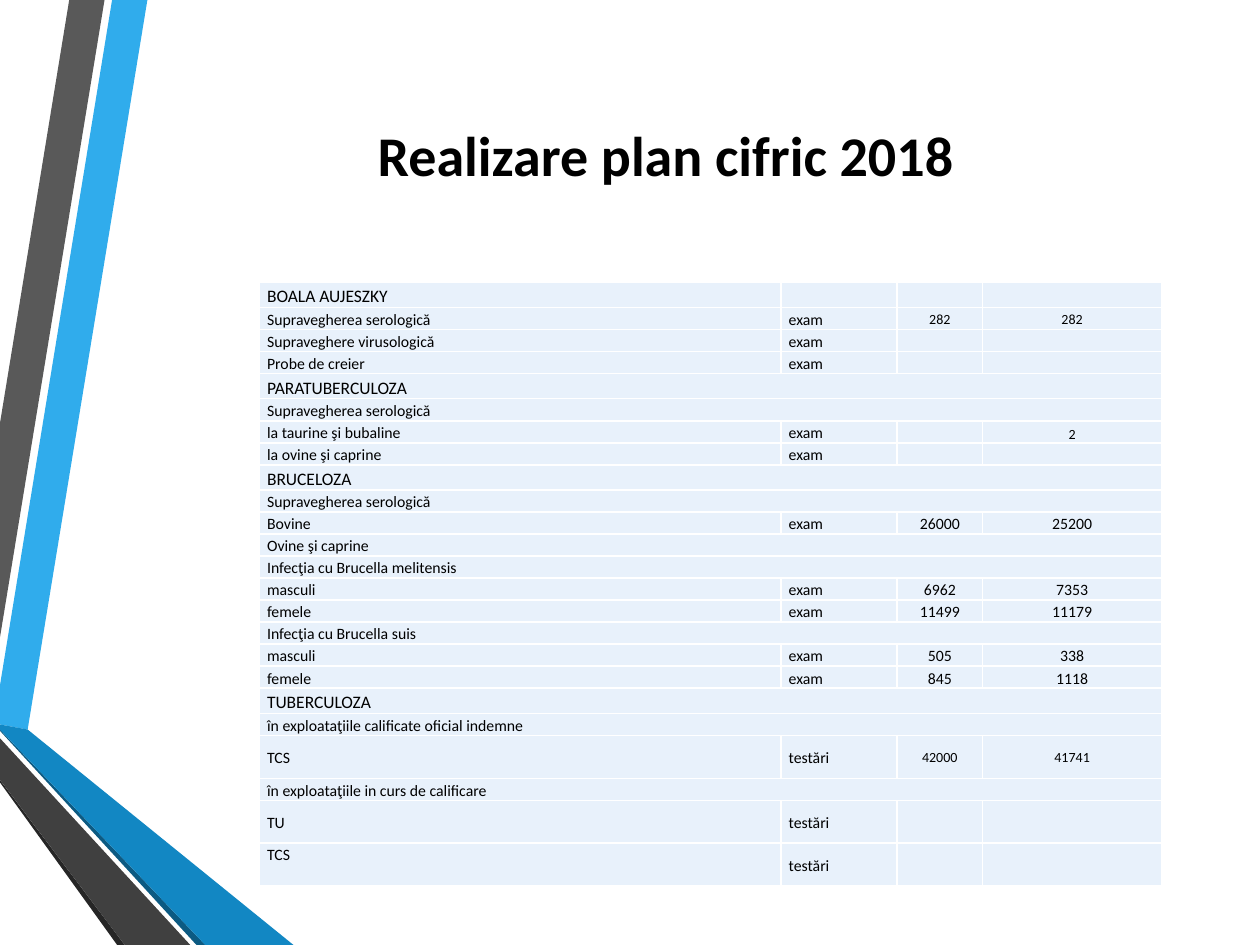
"""Build the slide with the 2018 animal health plan figures."""
from lxml import etree
from pptx import Presentation
from pptx.dml.color import RGBColor
from pptx.enum.text import MSO_ANCHOR as Anchor, PP_ALIGN as Align
from pptx.oxml.ns import qn
from pptx.util import Inches, Pt

BLACK = RGBColor(0x00, 0x00, 0x00)
CELL_BLUE = RGBColor(0xE8, 0xF1, 0xFB)
SKY = RGBColor(0x30, 0xAC, 0xEC)
GREY = RGBColor(0x59, 0x59, 0x59)
CHARCOAL = RGBColor(0x26, 0x26, 0x26)
NAVY = RGBColor(0x0C, 0x5A, 0x82)
BLUE = RGBColor(0x12, 0x87, 0xC3)
DARK_GREY = RGBColor(0x40, 0x40, 0x40)

SECTION, LINE, TALL = 0.2, 0.17, 0.34
COLUMN_WIDTHS = [4.14, 0.92, 0.68, 1.42]
SMALL_VALUES = {"282", "2", "42000", "41741"}

RIBBONS = [
    (SKY, [(0, 5.44), (0, 5.75), (0.22, 5.79), (1.17, 0), (0.89, 0)]),
    (GREY, [(0.83, 0), (0.55, 0), (0, 3.36), (0, 5.06)]),
    (CHARCOAL, [(0, 6.19), (0, 6.21), (0.93, 7.5), (0.99, 7.5)]),
    (NAVY, [(0, 5.79), (0, 5.8), (1.56, 7.5), (1.63, 7.5)]),
    (BLUE, [(0, 5.79), (1.63, 7.5), (2.33, 7.5), (0.22, 5.79), (0, 5.75)]),
    (DARK_GREY, [(0, 6.19), (0.99, 7.5), (1.51, 7.5), (0, 5.86)]),
]

PLAN = [
    (SECTION, "BOALA AUJESZKY", "", "", ""),
    (LINE, "Supravegherea serologică", "exam", "282", "282"),
    (LINE, "Supraveghere virusologică", "exam", "", ""),
    (LINE, "Probe de creier", "exam", "", ""),
    (SECTION, "PARATUBERCULOZA"),
    (LINE, "Supravegherea serologică"),
    (LINE, "la taurine şi bubaline", "exam", "", "2"),
    (LINE, "la ovine şi caprine", "exam", "", ""),
    (SECTION, "BRUCELOZA"),
    (LINE, "Supravegherea serologică"),
    (LINE, "Bovine", "exam", "26000", "25200"),
    (LINE, "Ovine şi caprine"),
    (LINE, "Infecţia cu Brucella melitensis"),
    (LINE, "masculi", "exam", "6962", "7353"),
    (LINE, "femele", "exam", "11499", "11179"),
    (LINE, "Infecţia cu Brucella suis"),
    (LINE, "masculi", "exam", "505", "338"),
    (LINE, "femele", "exam", "845", "1118"),
    (SECTION, "TUBERCULOZA"),
    (LINE, "în exploataţiile calificate oficial indemne"),
    (TALL, "TCS", "testări", "42000", "41741"),
    (LINE, "în exploataţiile in curs de calificare"),
    (TALL, "TU", "testări", "", ""),
    (TALL, "TCS", "testări", "", ""),
]


def write(frame, text, size, align=Align.LEFT, anchor=Anchor.MIDDLE, bold=False, spacing=1.0):
    frame.vertical_anchor = anchor
    paragraph = frame.paragraphs[0]
    paragraph.alignment = align
    paragraph.line_spacing = spacing
    if not text:
        paragraph._p.get_or_add_endParaRPr().set("sz", str(size * 100))
        return
    run = paragraph.add_run()
    run.text = text
    run.font.name = "Calibri"
    run.font.size = Pt(size)
    run.font.bold = bold
    run.font.color.rgb = BLACK


def style_cell(cell):
    cell.margin_left = cell.margin_right = Inches(0.06)
    cell.margin_top = cell.margin_bottom = 0
    properties = cell._tc.get_or_add_tcPr()
    for side in ("lnL", "lnR", "lnT", "lnB"):
        border = etree.SubElement(properties, qn(f"a:{side}"), w=str(Pt(1)))
        border_fill = etree.SubElement(border, qn("a:solidFill"))
        etree.SubElement(border_fill, qn("a:srgbClr"), val="FFFFFF")
    cell.fill.solid()
    cell.fill.fore_color.rgb = CELL_BLUE


deck = Presentation()
deck.slide_width, deck.slide_height = Inches(10), Inches(7.5)
slide = deck.slides.add_slide(deck.slide_layouts[5])

ribbon_group = slide.shapes.add_group_shape()
for color, points in RIBBONS:
    corners = [(Inches(x), Inches(y)) for x, y in points]
    outline = ribbon_group.shapes.build_freeform(*corners[0])
    outline.add_line_segments(corners[1:], close=True)
    ribbon = outline.convert_to_shape()
    ribbon.shadow.inherit = False
    ribbon.fill.solid()
    ribbon.fill.fore_color.rgb = color
    ribbon.line.fill.background()

title = slide.shapes.title
title.left, title.top = Inches(1.07), Inches(0.5)
title.width, title.height = Inches(8.43), Inches(1.44)
write(title.text_frame, "Realizare plan cifric 2018", 32, align=Align.CENTER, bold=True)

plan_table = slide.shapes.add_table(
    len(PLAN), len(COLUMN_WIDTHS), Inches(2.06), Inches(2.24),
    Inches(sum(COLUMN_WIDTHS)), Inches(sum(row[0] for row in PLAN)),
).table
plan_table.first_row = plan_table.horz_banding = False
for column, width in zip(plan_table.columns, COLUMN_WIDTHS):
    column.width = Inches(width)

last_row = len(PLAN) - 1
for row, (height, label, *values) in enumerate(PLAN):
    plan_table.rows[row].height = Inches(height)
    for col, text in enumerate([label, *(values or [""] * 3)]):
        cell = plan_table.cell(row, col)
        style_cell(cell)
        size = 10 if height == SECTION and col == 0 else 8 if text in SMALL_VALUES else 9
        anchor = Anchor.MIDDLE
        if text == "2" or (col == 0 and height != TALL):
            anchor = Anchor.BOTTOM
        elif col == 0 and row == last_row:
            anchor = Anchor.TOP
        write(cell.text_frame, text, size, spacing=1.15,
              align=Align.CENTER if col > 1 else Align.LEFT)
        cell.vertical_anchor = anchor
    if not values:
        plan_table.cell(row, 0).merge(plan_table.cell(row, 3))

deck.save("out.pptx")
